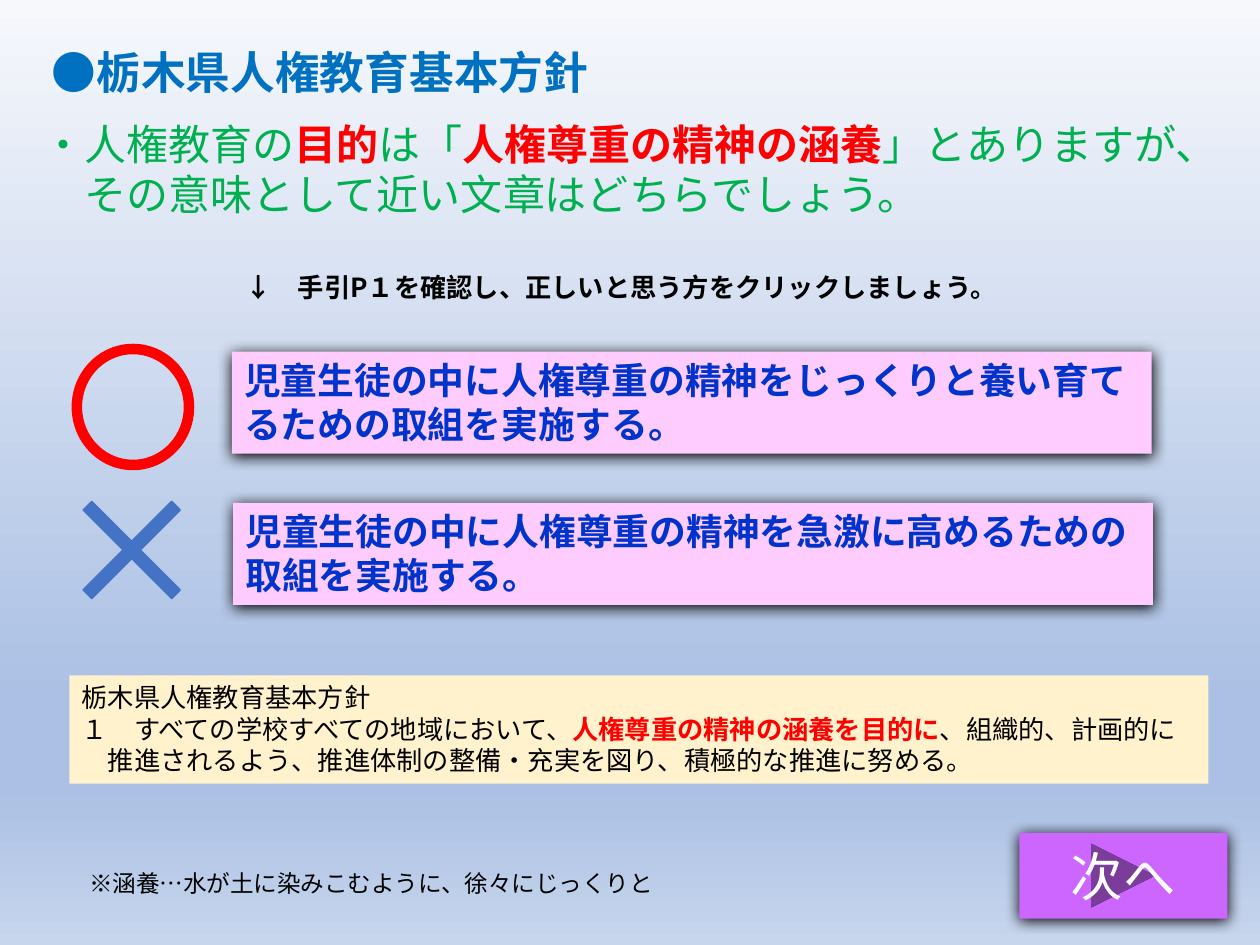
import pptx
import pptx.dml.color
import pptx.enum.shapes
import pptx.enum.text
import pptx.oxml
import pptx.oxml.ns
import pptx.util
from pptx.util import Inches

THEME = {
    "font": "Noto Sans CJK JP", "note_font": "Calibri",
    "heading": "0070C0", "question": "00B050", "accent": "FF0000",
    "answer": "0033CC", "answer_fill": "FFCCFF", "policy_fill": "FFF2CC",
    "button_fill": "CC66FF", "cross": "4472C4", "black": "000000", "white": "FFFFFF",
    "background": [(0, "F6F8FC"), (74, "ABC0E4"), (83, "ABC0E4"), (100, "C7D5ED")],
    "title_size": 25.5, "question_size": 24, "answer_size": 21,
    "text_size": 15, "note_size": 13.5, "button_size": 30,
}
NAMESPACE = pptx.oxml.ns.nsdecls("a")
SHAPES = pptx.enum.shapes.MSO_SHAPE
ALIGN = pptx.enum.text.PP_ALIGN
ANCHOR = pptx.enum.text.MSO_ANCHOR
AUTO_SIZE = pptx.enum.text.MSO_AUTO_SIZE


def color(name):
    return pptx.dml.color.RGBColor.from_string(THEME[name])


def write(shape, lines, size, base_color, bold=False, font="font", hang=0,
          alignment=ALIGN.LEFT, **frame_format):
    """Fill a shape with lines of runs; every second run of a line is accented.

    A hang in inches sets the first line out and the later lines in.
    """
    frame = shape.text_frame
    settings = {"word_wrap": True, "vertical_anchor": ANCHOR.TOP, **frame_format}
    for name, value in settings.items():
        setattr(frame, name, value)
    for number, runs in enumerate(lines):
        paragraph = frame.paragraphs[0] if number == 0 else frame.add_paragraph()
        paragraph.alignment = alignment
        paragraph.space_before = pptx.util.Pt(0)
        if hang:
            properties = paragraph._p.get_or_add_pPr()
            properties.set("marL", str(Inches(hang)))
            properties.set("indent", str(-Inches(hang) if number == 0 else 0))
        for position, text in enumerate(runs):
            accented = position % 2 == 1
            run = paragraph.add_run()
            run.text = text
            formats = {"size": pptx.util.Pt(THEME[size]), "bold": bold or accented,
                       "name": THEME[font]}
            for name, value in formats.items():
                setattr(run.font, name, value)
            run.font.color.rgb = color("accent" if accented else base_color)


presentation = pptx.Presentation()
presentation.slide_width = Inches(10)
presentation.slide_height = Inches(7.5)
slide = presentation.slides.add_slide(presentation.slide_layouts[5])

# Background
slide.background.fill.gradient()
slide.background.fill.gradient_angle = 270
stops = slide.element.find(".//" + pptx.oxml.ns.qn("a:gsLst"))
for stop in list(stops):
    stops.remove(stop)
for percent, value in THEME["background"]:
    stops.append(pptx.oxml.parse_xml(
        f'<a:gs {NAMESPACE} pos="{percent * 1000}"><a:srgbClr val="{value}"/></a:gs>'))

# Title
title = slide.shapes.title
for name, value in {"left": 0.31, "top": 0.31, "width": 4.92, "height": 0.46}.items():
    setattr(title, name, Inches(value))
write(title, [["●栃木県人権教育基本方針"]], "title_size", "heading", bold=True,
      auto_size=AUTO_SIZE.NONE)

# Plain text
question = [["・人権教育の", "目的", "は「", "人権尊重の精神の涵養", "」とありますが、"],
            ["その意味として近い文章はどちらでしょう。"]]
texts = [
    ((0.24, 0.89, 9.65, 0.91), question,
     {"size": "question_size", "base_color": "question", "hang": 0.33}),
    ((1.85, 2.1, 6.24, 0.35), [["↓　手引P１を確認し、正しいと思う方をクリックしましょう。"]],
     {"size": "text_size", "base_color": "black", "bold": True}),
    ((0.61, 6.85, 4.75, 0.33), [["※涵養…水が土に染みこむように、徐々にじっくりと"]],
     {"size": "note_size", "base_color": "black", "font": "note_font"}),
]
for place, lines, text_format in texts:
    box = slide.shapes.add_textbox(*map(Inches, place))
    write(box, lines, word_wrap=False, auto_size=AUTO_SIZE.SHAPE_TO_FIT_TEXT, **text_format)

# Filled boxes: two answers, the policy and the button
answer_format = {"size": "answer_size", "base_color": "answer", "bold": True}
policy = [["栃木県人権教育基本方針"],
          ["１　すべての学校すべての地域において、", "人権尊重の精神の涵養を目的に",
           "、組織的、計画的に"],
          ["　推進されるよう、推進体制の整備・充実を図り、積極的な推進に努める。"]]
boxes = [
    (SHAPES.RECTANGLE, (1.84, 2.79, 7.3, 0.81), "answer_fill", True,
     [["児童生徒の中に人権尊重の精神をじっくりと養い育てるための取組を実施する。"]], answer_format),
    (SHAPES.RECTANGLE, (1.85, 3.99, 7.3, 0.81), "answer_fill", True,
     [["児童生徒の中に人権尊重の精神を急激に高めるための取組を実施する。"]], answer_format),
    (SHAPES.RECTANGLE, (0.55, 5.36, 9.04, 0.86), "policy_fill", False, policy,
     {"size": "text_size", "base_color": "black", "font": "note_font", "word_wrap": False}),
    (SHAPES.ACTION_BUTTON_FORWARD_OR_NEXT, (8.09, 6.61, 1.65, 0.68), "button_fill", True,
     [["次へ"]], {"size": "button_size", "base_color": "white", "alignment": ALIGN.CENTER,
                "vertical_anchor": ANCHOR.MIDDLE}),
]
for preset, place, fill, shadowed, lines, text_format in boxes:
    shape = slide.shapes.add_shape(preset, *map(Inches, place))
    shape.shadow.inherit = False
    shape.fill.solid()
    shape.fill.fore_color.rgb = color(fill)
    shape.line.fill.background()
    if shadowed:
        effects = shape._element.spPr.find(pptx.oxml.ns.qn("a:effectLst"))
        effects.append(pptx.oxml.parse_xml(
            f'<a:outerShdw {NAMESPACE} blurRad="{pptx.util.Pt(8.5)}" '
            f'dist="{pptx.util.Pt(1)}" dir="5400000" algn="ctr" rotWithShape="0">'
            f'<a:srgbClr val="{THEME["black"]}"/></a:outerShdw>'))
    write(shape, lines, **text_format)

# Circle and cross marks
circle = slide.shapes.add_shape(SHAPES.OVAL, *map(Inches, (0.61, 2.77, 0.89, 0.92)))
circle.fill.background()
cross = slide.shapes.add_shape(SHAPES.MATH_MULTIPLY, *map(Inches, (0.37, 3.69, 1.35, 1.35)))
cross.adjustments[0] = 0.07
cross.fill.solid()
cross.fill.fore_color.rgb = color("cross")
for mark, line_color, width in [(circle, "accent", 6), (cross, "cross", 1)]:
    mark.shadow.inherit = False
    mark.line.color.rgb = color(line_color)
    mark.line.width = pptx.util.Pt(width)

presentation.save("out.pptx")
